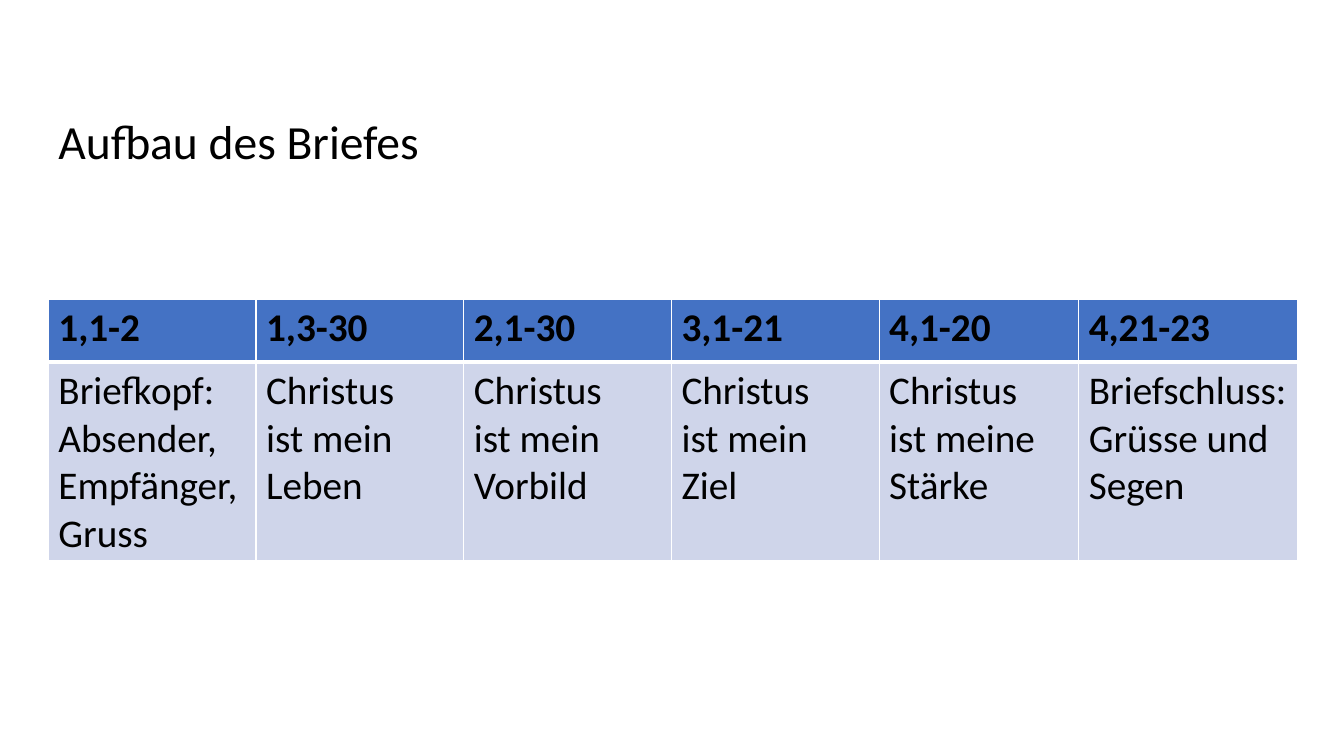
import pptx
import pptx.util
import pptx.dml.color
import pptx.enum.text
import pptx.oxml
import pptx.oxml.ns
from dataclasses import dataclass


@dataclass(frozen=True)
class Theme:
    font: str = "Calibri"
    text: str = "000000"
    header: str = "4472C4"
    body: str = "CFD5EA"
    border: str = "FFFFFF"
    title_size: int = 34
    table_size: int = 28
    thin: int = 1
    thick: int = 3


theme = Theme()
sections = [
    ("1,1-2", ["Briefkopf: Absender, Empfänger, Gruss"], 2.06),
    ("1,3-30", ["Christus", "ist mein Leben"], 2.06),
    ("2,1-30", ["Christus", "ist mein Vorbild"], 2.06),
    ("3,1-21", ["Christus", "ist mein Ziel"], 2.06),
    ("4,1-20", ["Christus", "ist meine Stärke"], 1.98),
    ("4,21-23", ["Briefschluss: Grüsse und Segen"], 2.17),
]
row_heights = [0.62, 1.97]
left = 0.48


def write(para, text, size, bold=False):
    span = para.add_run()
    span.text = text
    span.font.name = theme.font
    span.font.size = pptx.util.Pt(size)
    span.font.bold = bold
    span.font.color.rgb = pptx.dml.color.RGBColor.from_string(theme.text)


def set_border(cell, side, width):
    cell._tc.get_or_add_tcPr().append(pptx.oxml.parse_xml(
        f'<a:ln{side} {pptx.oxml.ns.nsdecls("a")} w="{pptx.util.Pt(width)}">'
        f'<a:solidFill><a:srgbClr val="{theme.border}"/></a:solidFill></a:ln{side}>'
    ))


deck = pptx.Presentation()
deck.slide_width = pptx.util.Inches(13.33)
deck.slide_height = pptx.util.Inches(7.5)
page = deck.slides.add_slide(deck.slide_layouts[5])

title = page.shapes.title
title.left, title.top, title.width, title.height = map(
    pptx.util.Inches, (left, 1.06, 12.49, 0.67))
title.text_frame.word_wrap = True
title.text_frame.auto_size = pptx.enum.text.MSO_AUTO_SIZE.SHAPE_TO_FIT_TEXT
title.text_frame.vertical_anchor = pptx.enum.text.MSO_ANCHOR.TOP
heading = title.text_frame.paragraphs[0]
heading.alignment = pptx.enum.text.PP_ALIGN.LEFT
write(heading, "Aufbau des Briefes", theme.title_size)

table_width = sum(width for _, _, width in sections)
table = page.shapes.add_table(
    len(row_heights), len(sections),
    *map(pptx.util.Inches, (left, 2.97, table_width, sum(row_heights)))).table
for row, height in zip(table.rows, row_heights):
    row.height = pptx.util.Inches(height)

for column, (verses, lines, width) in enumerate(sections):
    table.columns[column].width = pptx.util.Inches(width)
    for row, content in enumerate([[verses], lines]):
        is_header = row == 0
        cell = table.cell(row, column)
        for side in "LRTB":
            divider = (row, side) in [(0, "B"), (1, "T")]
            set_border(cell, side, theme.thick if divider else theme.thin)
        cell.fill.solid()
        cell.fill.fore_color.rgb = pptx.dml.color.RGBColor.from_string(
            theme.header if is_header else theme.body)
        for index, line in enumerate(content):
            frame = cell.text_frame
            para = frame.paragraphs[0] if index == 0 else frame.add_paragraph()
            write(para, line, theme.table_size, is_header)

deck.save("out.pptx")
